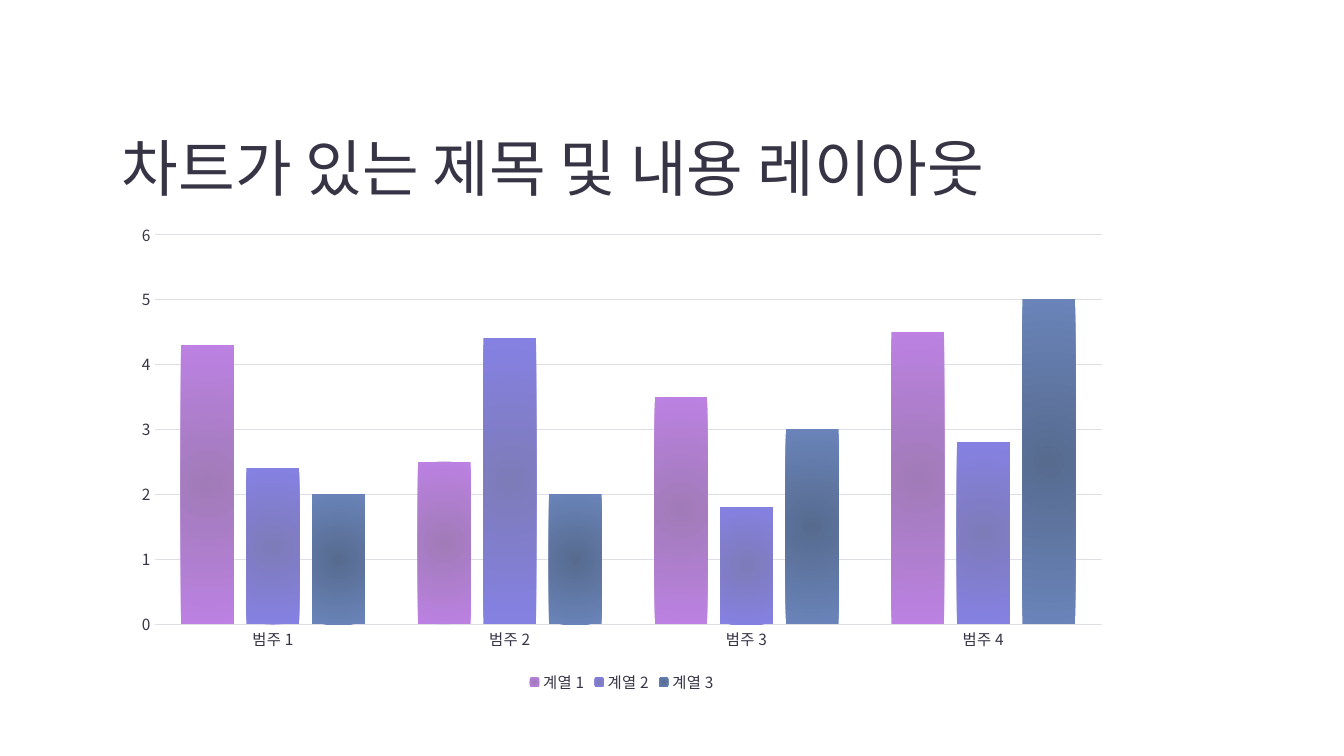
from dataclasses import dataclass

import lxml.etree
import pptx
import pptx.chart.data
import pptx.dml.color
import pptx.enum.chart
import pptx.enum.text
import pptx.oxml.ns
import pptx.util
from pptx.util import Cm

qn = pptx.oxml.ns.qn


@dataclass(frozen=True)
class Theme:
    font: str = "Noto Sans CJK KR"
    ink: str = "373545"
    grid: str = "DFDEE6"
    background: str = "FFFFFF"
    title_size: int = 44
    label_size: int = 11
    line_width: float = 0.75


@dataclass(frozen=True)
class Series:
    name: str
    values: tuple[float, ...]
    centre: str
    edge: str


THEME = Theme()
CATEGORIES = [f"범주 {number}" for number in range(1, 5)]
SERIES = [
    Series("계열 1", (4.3, 2.5, 3.5, 4.5), "A17BB8", "BC81E2"),
    Series("계열 2", (2.4, 4.4, 1.8, 2.8), "7E7BB9", "8581E3"),
    Series("계열 3", (2, 2, 3, 5), "576B8F", "6A84BA"),
]
LEFT, WIDTH = Cm(3.07), Cm(25.2)


def rgb(colour: str) -> pptx.dml.color.RGBColor:
    return pptx.dml.color.RGBColor.from_string(colour)


def style_font(font, size: int) -> None:
    font.name = THEME.font
    font.size = pptx.util.Pt(size)
    font.bold = False
    font.color.rgb = rgb(THEME.ink)


def add_korean_font(element) -> None:
    """Use each Latin typeface for Korean letters too."""
    for latin in list(element.iter(qn("a:latin"))):
        korean = lxml.etree.Element(qn("a:ea"))
        korean.set("typeface", latin.get("typeface"))
        latin.addnext(korean)


def style_line(line) -> None:
    line.color.rgb = rgb(THEME.grid)
    line.width = pptx.util.Pt(THEME.line_width)


def fill_radial(bars, series: Series) -> None:
    fill = bars.format.fill
    fill.gradient()
    for stop, colour in zip(fill.gradient_stops, (series.centre, series.edge)):
        stop.color.rgb = rgb(colour)
    gradient = bars._element.find(".//" + qn("a:gradFill"))
    gradient.remove(gradient.find(qn("a:lin")))
    circle = lxml.etree.SubElement(gradient, qn("a:path"))
    circle.set("path", "circle")
    focus = lxml.etree.SubElement(circle, qn("a:fillToRect"))
    for side in "ltrb":
        focus.set(side, "100000")


def add_title(slide) -> None:
    title = slide.shapes.add_textbox(LEFT, Cm(1.96), WIDTH, Cm(3.17))
    frame = title.text_frame
    frame.word_wrap = True
    frame.vertical_anchor = pptx.enum.text.MSO_ANCHOR.BOTTOM
    frame.margin_left = frame.margin_right = frame.margin_bottom = 0
    frame.margin_top = Cm(0.13)
    heading = frame.paragraphs[0]
    heading.text = "차트가 있는 제목 및 내용 레이아웃"
    style_font(heading.font, THEME.title_size)
    add_korean_font(title._element)


def add_column_chart(slide) -> None:
    data = pptx.chart.data.CategoryChartData()
    data.categories = CATEGORIES
    for series in SERIES:
        data.add_series(series.name, series.values)
    chart = slide.shapes.add_chart(
        pptx.enum.chart.XL_CHART_TYPE.COLUMN_CLUSTERED,
        LEFT, Cm(5.38), WIDTH, Cm(12.19), data,
    ).chart
    chart.has_title = False
    style_font(chart.font, THEME.label_size)

    # Columns
    plot = chart.plots[0]
    plot.vary_by_categories = False
    plot.gap_width, plot.overlap = 100, -24
    for bars, series in zip(plot.series, SERIES):
        fill_radial(bars, series)

    # Axes and grid
    for axis in (chart.category_axis, chart.value_axis):
        axis.major_tick_mark = pptx.enum.chart.XL_TICK_MARK.NONE
        axis.minor_tick_mark = pptx.enum.chart.XL_TICK_MARK.NONE
        style_font(axis.tick_labels.font, THEME.label_size)
    style_line(chart.category_axis.format.line)
    values = chart.value_axis
    values.minimum_scale, values.maximum_scale, values.major_unit = 0, 6, 1
    values.format.line.fill.background()
    values.has_major_gridlines = True
    style_line(values.major_gridlines.format.line)

    # Legend
    chart.has_legend = True
    chart.legend.position = pptx.enum.chart.XL_LEGEND_POSITION.BOTTOM
    chart.legend.include_in_layout = False
    style_font(chart.legend.font, THEME.label_size)
    add_korean_font(chart._chartSpace)


def main() -> None:
    presentation = pptx.Presentation()
    presentation.slide_width, presentation.slide_height = Cm(33.87), Cm(19.05)
    slide = presentation.slides.add_slide(presentation.slide_layouts[6])
    slide.background.fill.solid()
    slide.background.fill.fore_color.rgb = rgb(THEME.background)
    add_title(slide)
    add_column_chart(slide)
    presentation.save("out.pptx")


if __name__ == "__main__":
    main()
